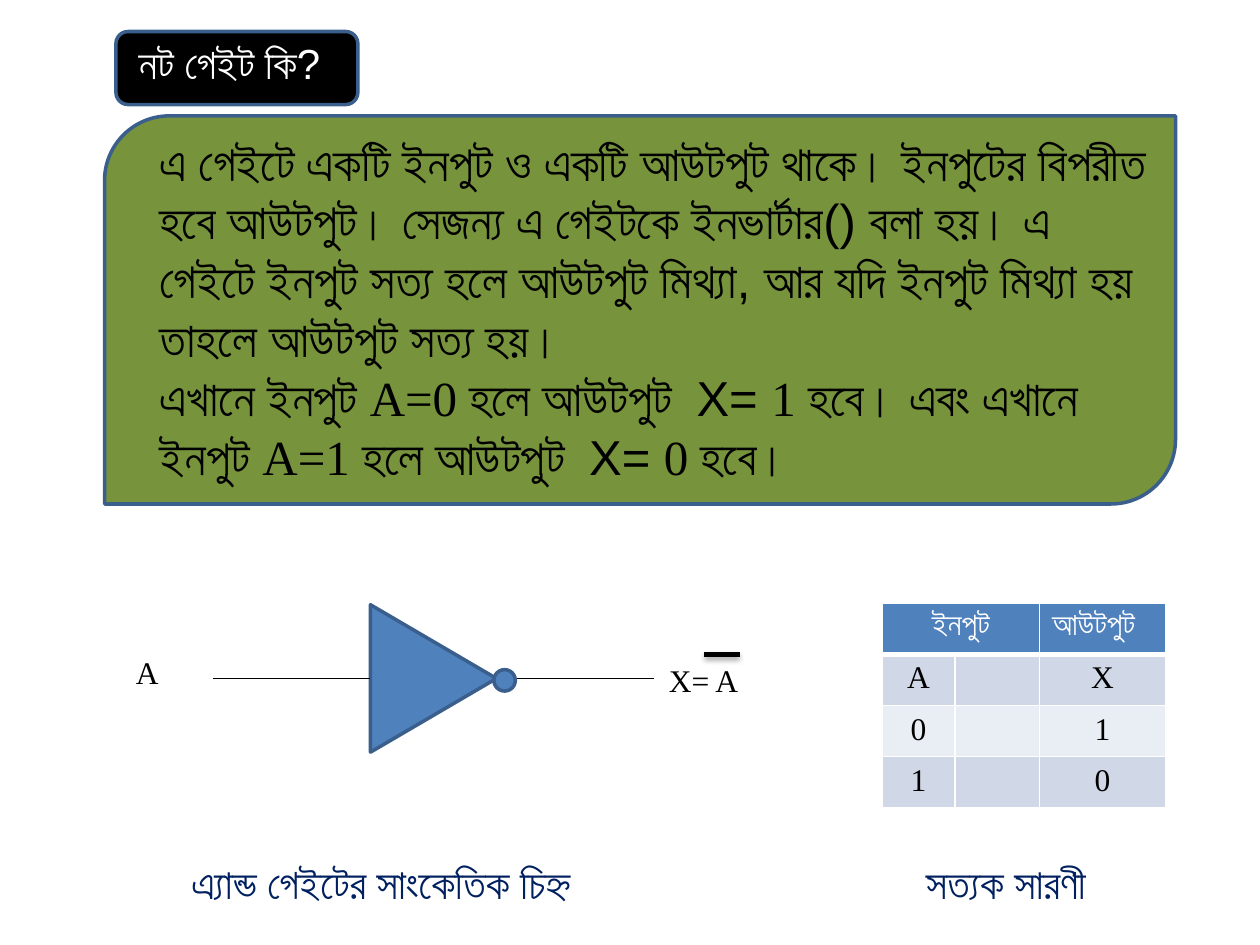
from lxml.etree import SubElement
from pptx import Presentation
from pptx.dml.color import RGBColor
from pptx.enum.shapes import MSO_CONNECTOR, MSO_SHAPE
from pptx.enum.text import MSO_ANCHOR, PP_ALIGN
from pptx.oxml.ns import qn
from pptx.util import Inches, Pt

SANS, SERIF = "Arial", "Times New Roman"
BLACK, WHITE, NAVY = "000000", "FFFFFF", "002060"
BLUE, OUTLINE, GREEN = "4F81BD", "3A5F8C", "77933C"
BANDS = ["D0D8E8", "E9EDF4"]


def color(value):
    return RGBColor.from_string(value)


def add_runs(paragraph, runs, size, fill, bold=False):
    for text, font_name in runs:
        run = paragraph.add_run()
        run.text = text
        run.font.name = font_name
        run.font.size = Pt(size)
        run.font.bold = bold
        run.font.color.rgb = color(fill)


def fill_text(shape, paragraphs, size, fill, wrap=True):
    frame = shape.text_frame
    frame.word_wrap = wrap
    frame.vertical_anchor = MSO_ANCHOR.TOP
    for index, runs in enumerate(paragraphs):
        paragraph = frame.add_paragraph() if index else frame.paragraphs[0]
        paragraph.alignment = PP_ALIGN.LEFT
        add_runs(paragraph, runs, size, fill)


def add_text(shapes, box, paragraphs, size, fill=BLACK, wrap=True):
    shape = shapes.add_textbox(*map(Inches, box))
    fill_text(shape, paragraphs, size, fill, wrap)


def add_outlined(shapes, preset, box, fill):
    shape = shapes.add_shape(preset, *map(Inches, box))
    shape.shadow.inherit = False
    shape.fill.solid()
    shape.fill.fore_color.rgb = color(fill)
    shape.line.color.rgb = color(OUTLINE)
    shape.line.width = Pt(2)
    return shape


def add_line(shapes, left, right, y, width):
    """Draw a level black line and return its effect list."""
    line = shapes.add_connector(
        MSO_CONNECTOR.STRAIGHT, Inches(left), Inches(y), Inches(right), Inches(y))
    line.line.color.rgb = color(BLACK)
    line.line.width = Pt(width)
    return SubElement(line.element.spPr, qn("a:effectLst"))


def build_heading(slide, left, top, width, height):
    badge = add_outlined(slide.shapes, MSO_SHAPE.FLOWCHART_ALTERNATE_PROCESS,
                         (left, top, width, height), BLACK)
    title = slide.shapes.title
    title.left, title.top = Inches(left + 0.08), Inches(top)
    title.width, title.height = Inches(width - 0.17), Inches(0.5)
    fill_text(title, [[("নট গেইট কি?", SANS)]], 24, WHITE)
    badge.element.addnext(title.element)  # title in front of its badge


def build_explanation(slide, left, top, width, height):
    add_outlined(slide.shapes, MSO_SHAPE.ROUND_2_DIAG_RECTANGLE,
                 (left, top, width, height), GREEN)
    definition = ("এ গেইটে একটি ইনপুট ও একটি আউটপুট থাকে। ইনপুটের বিপরীত হবে আউটপুট। "
                  "সেজন্য এ গেইটকে ইনভার্টার() বলা হয়। এ গেইটে ইনপুট সত্য হলে আউটপুট মিথ্যা, "
                  "আর যদি ইনপুট মিথ্যা হয় তাহলে আউটপুট সত্য হয়।")
    result = "হলে আউটপুট  X= "
    example = [
        ("এখানে ইনপুট ", SANS), ("A=0 ", SERIF), (result, SANS), ("1 ", SERIF),
        ("হবে। এবং এখানে ইনপুট ", SANS), ("A=1 ", SERIF), (result, SANS),
        ("0 ", SERIF), ("হবে।", SANS),
    ]
    add_text(slide.shapes, (left + 0.34, top + 0.08, width - 0.42, height + 0.15),
             [[(definition, SANS)], example], 28)


def build_gate(slide, left, top, width, height):
    axis = top + height / 2
    shapes = slide.shapes.add_group_shape().shapes
    # Input label
    add_text(shapes, (left + 0.06, axis - 0.25, 0.46, 0.54), [[("A", SERIF)]], 18)
    # Inverter triangle, pointing right
    triangle = add_outlined(shapes, MSO_SHAPE.ISOSCELES_TRIANGLE,
                            (left + 2.52 - height / 2, axis - 0.5, height, 1), BLUE)
    triangle.rotation = 90
    # Input and output wires
    for start in (0.77, 3.02):
        add_line(shapes, left + start, left + start + 1.25, axis, 0.75)
    # Negation bubble
    add_outlined(shapes, MSO_SHAPE.OVAL, (left + 3, axis - 0.07, 0.17, 0.17), BLUE)
    # Output label with a bar over its A
    right = left + width
    add_text(slide.shapes, (right - 0.76, axis - 0.19, 0.76, 0.4),
             [[("X= A", SERIF)]], 18, wrap=False)
    effects = add_line(slide.shapes, right - 0.38, right - 0.1, axis - 0.19, 3)
    shadow = SubElement(effects, qn("a:outerShdw"), blurRad=str(Pt(3.1)),
                        dist=str(Pt(1.8)), dir="5400000", rotWithShape="0")
    shade = SubElement(shadow, qn("a:srgbClr"), val=BLACK)
    SubElement(shade, qn("a:alpha"), val="35000")


def set_borders(cell, top, bottom):
    properties = cell._tc.get_or_add_tcPr()
    sides = {"lnL": 1, "lnR": 1, "lnT": top, "lnB": bottom}
    for index, (side, width) in enumerate(sides.items()):
        line = properties.makeelement(qn(f"a:{side}"), {"w": str(Pt(width))})
        properties.insert(index, line)
        fill = SubElement(line, qn("a:solidFill"))
        SubElement(fill, qn("a:srgbClr"), val=WHITE)


def build_truth_table(slide, left, top, width, height):
    rows = [["ইনপুট", "", "আউটপুট"], ["A", "", "X"], ["0", "", "1"], ["1", "", "0"]]
    columns = [0.58, 0.67, 1]
    table = slide.shapes.add_table(
        len(rows), len(columns), *map(Inches, (left, top, width, height))).table
    for column, column_width in zip(table.columns, columns):
        column.width = Inches(column_width)
    for row_index, row in enumerate(rows):
        header = row_index == 0
        for column_index, text in enumerate(row):
            cell = table.cell(row_index, column_index)
            cell.fill.solid()
            cell.fill.fore_color.rgb = color(BLUE if header else BANDS[(row_index - 1) % 2])
            set_borders(cell, 3 if row_index == 1 else 1, 3 if header else 1)
            paragraph = cell.text_frame.paragraphs[0]
            left_aligned = header and column_index == 2
            paragraph.alignment = PP_ALIGN.LEFT if left_aligned else PP_ALIGN.CENTER
            if text:
                add_runs(paragraph, [(text, SANS if header else SERIF)], 18,
                         WHITE if header else BLACK, header)
    table.cell(0, 0).merge(table.cell(0, 1))


def build_captions(slide, top):
    captions = [(1.42, 4, "এ্যান্ড গেইটের সাংকেতিক চিহ্ন"), (7.25, 1.6, "সত্যক সারণী")]
    for left, width, text in captions:
        add_text(slide.shapes, (left, top, width, 0.5), [[(text, SANS)]], 24, NAVY)


def main():
    presentation = Presentation()
    presentation.slide_width, presentation.slide_height = Inches(10), Inches(7.5)
    slide = presentation.slides.add_slide(presentation.slide_layouts[5])
    build_explanation(slide, 0.83, 0.92, 8.5, 3.08)
    build_heading(slide, 0.92, 0.25, 1.92, 0.58)
    build_truth_table(slide, 7, 4.79, 2.25, 1.62)
    build_captions(slide, 6.76)
    build_gate(slide, 0.92, 4.8, 5.05, 1.17)
    presentation.save("out.pptx")


if __name__ == "__main__":
    main()
